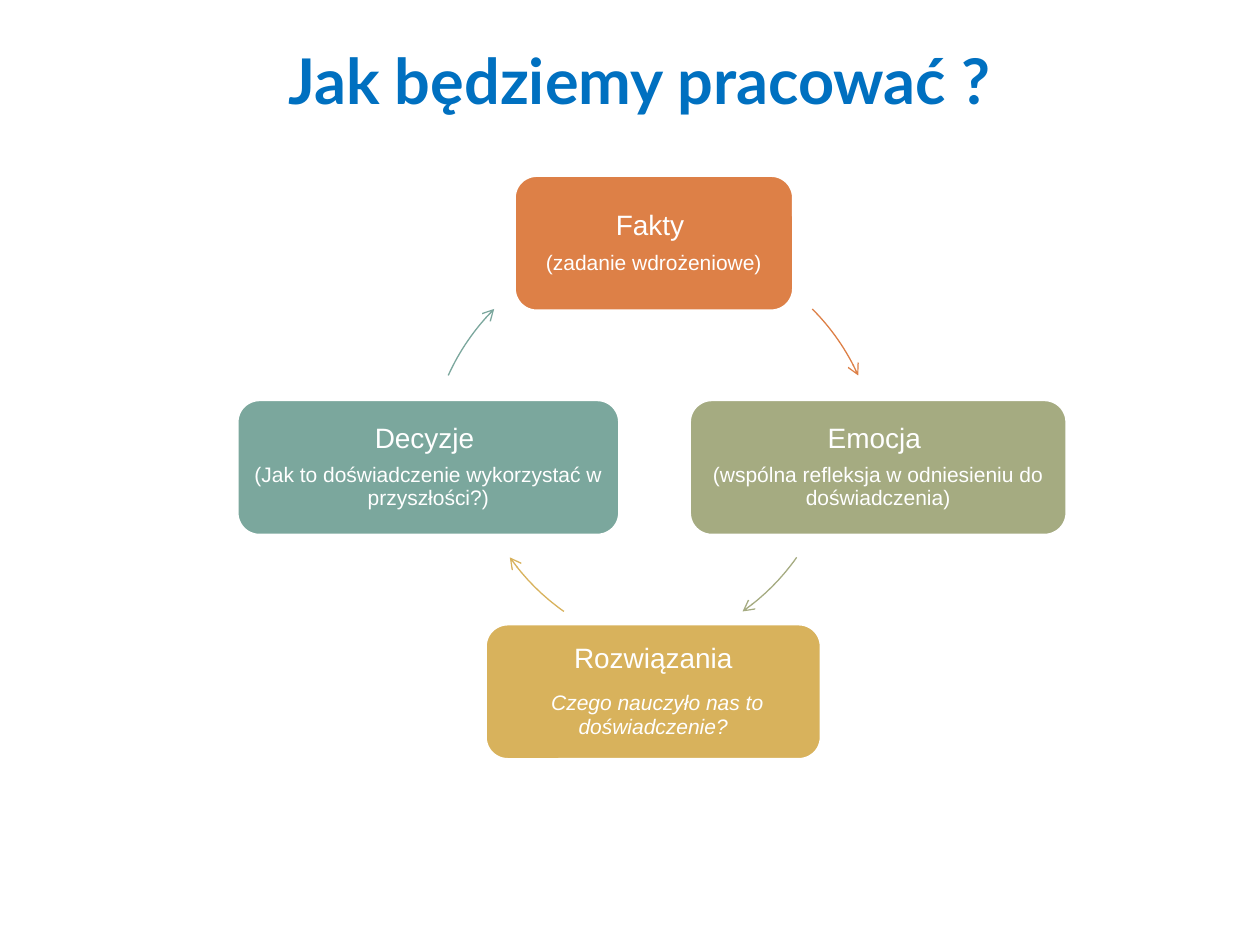
import math

from lxml import etree
from pptx import Presentation
from pptx import util as u
from pptx.dml.color import RGBColor
from pptx.enum import shapes, text
from pptx.oxml.ns import qn


def tint(code):
    return RGBColor.from_string(code)


class Deck:
    """Holds the style and the current slide, and draws each kind of element."""

    face, white, blue = "Arial", "FFFFFF", "0070C0"
    head, body = 16, 12
    inset = u.Inches(0.07)
    ring = u.Inches(3.57)

    def __init__(self, slide):
        self.slide = slide

    def add_run(self, para, words, size, color, face, bold=False, slant=False):
        run = para.add_run()
        run.text = words
        font = run.font
        font.size, font.name = u.Pt(size), face
        font.bold, font.italic = bold, slant
        font.color.rgb = tint(color)

    def title(self, words, left, top, width, height):
        box = self.slide.shapes.add_textbox(*map(u.Inches, (left, top, width, height)))
        frame = box.text_frame
        frame.word_wrap = True
        frame.auto_size = text.MSO_AUTO_SIZE.SHAPE_TO_FIT_TEXT
        para = frame.paragraphs[0]
        para.alignment = text.PP_ALIGN.CENTER
        self.add_run(para, words, 36, self.blue, "Lato", bold=True)

    def card(self, left, top, width, color, name, note):
        box = self.slide.shapes.add_shape(
            shapes.MSO_SHAPE.ROUNDED_RECTANGLE,
            *map(u.Inches, (left, top, width, 1.08)))
        box.shadow.inherit = False
        box.fill.solid()
        box.fill.fore_color.rgb = tint(color)
        box.line.color.rgb = tint(self.white)
        box.line.width = u.Pt(2)
        frame = box.text_frame
        frame.word_wrap = True
        frame.vertical_anchor = text.MSO_ANCHOR.MIDDLE
        frame.margin_left = frame.margin_right = self.inset
        frame.margin_top = frame.margin_bottom = self.inset
        rows = [[(name, self.head, False)], note]
        for row, runs in enumerate(rows):
            para = frame.add_paragraph() if row else frame.paragraphs[0]
            para.alignment = text.PP_ALIGN.CENTER
            para.line_spacing = 0.9
            para.space_after = u.Pt(0.35 * max(size for _, size, _ in runs))
            for words, size, slant in runs:
                self.add_run(para, words, size, self.white, self.face, slant=slant)

    def curve(self, color, left, top, start, end, steps=16):
        left, top, half = u.Inches(left), u.Inches(top), self.ring / 2
        turns = [math.radians(start + (end - start) * n / steps)
                 for n in range(steps + 1)]
        dots = [(left + half + half * math.cos(a), top + half + half * math.sin(a))
                for a in turns]
        path = self.slide.shapes.build_freeform(*dots[0])
        path.add_line_segments(dots[1:], close=False)
        arc = path.convert_to_shape()
        self.widen(arc, left, top)
        arc.shadow.inherit = False
        arc.fill.background()
        arc.line.color.rgb = tint(color)
        arc.line.width = u.Pt(0.75)
        etree.SubElement(arc.line._get_or_add_ln(), qn("a:tailEnd"), type="arrow")

    def widen(self, arc, left, top):
        shift = {"x": arc.left - left, "y": arc.top - top}
        for dot in arc._element.iter(qn("a:pt")):
            for axis, move in shift.items():
                dot.set(axis, str(int(dot.get(axis)) + move))
        for track in arc._element.iter(qn("a:path")):
            track.set("w", str(self.ring))
            track.set("h", str(self.ring))
        arc.left, arc.top = left, top
        arc.width = arc.height = self.ring


def main():
    show = Presentation()
    show.slide_width, show.slide_height = u.Inches(10), u.Inches(7.5)
    deck = Deck(show.slides.add_slide(show.slide_layouts[6]))
    size = deck.body
    mid, gap = 3.17, 1.78
    steps = [
        (4.08, mid - gap, 2.22, "DD8047", "Fakty ",
         [("(zadanie wdrożeniowe)", size, False)], (3.4, 1.93, -45, -24.3)),
        (5.47, mid, 3, "A5AB81", "Emocja ",
         [("(wspólna refleksja w odniesieniu do doświadczenia)", size, False)],
         (3.08, 1.61, 35.2, 54.8)),
        (3.85, mid + gap, 2.67, "D8B25C", "Rozwiązania",
         [(" ", 17, False), ("Czego nauczyło nas to doświadczenie?", size, True)],
         (3.72, 1.61, 125.2, 144.8)),
        (1.88, mid, 3.04, "7BA79D", "Decyzje ",
         [("(Jak to doświadczenie wykorzystać w przyszłości?)", size, False)],
         (3.4, 1.93, 204.3, 225)),
    ]
    for left, top, width, color, name, note, bend in steps:
        deck.card(left, top, width, color, name, note)
        deck.curve(color, *bend)
    deck.title("Jak będziemy pracować ?", 1.77, 0.28, 6.61, 0.71)
    show.save("out.pptx")


if __name__ == "__main__":
    main()
